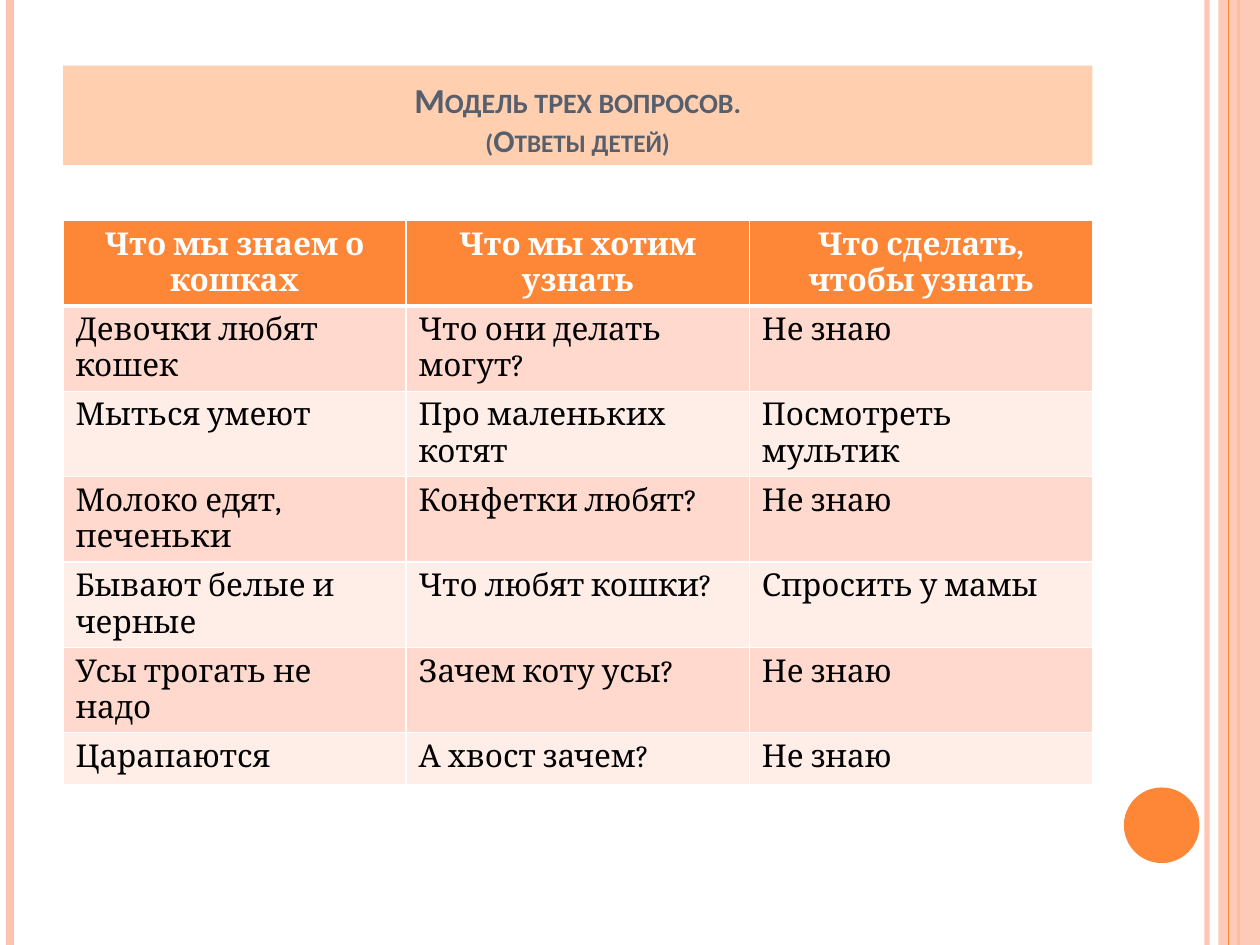
"""Builds a slide with a three-question table about cats."""
from lxml.etree import SubElement
from pptx import Presentation
from pptx.enum.shapes import MSO_CONNECTOR, MSO_SHAPE
from pptx.enum.text import MSO_ANCHOR, MSO_AUTO_SIZE, PP_ALIGN
from pptx.dml.color import RGBColor
from pptx.oxml.ns import qn
from pptx.util import Inches, Pt

ORANGE, PINK, WHITE = "FE8637", "FEC3AE", "FFFFFF"
BANDS = ["FFEDE8", "FFD9CE"]
ROWS = [
    ["Что мы знаем о кошках", "Что мы хотим узнать", "Что сделать, чтобы узнать"],
    ["Девочки любят кошек", "Что они делать могут?", "Не знаю"],
    ["Мыться умеют", "Про маленьких котят", "Посмотреть мультик"],
    ["Молоко едят, печеньки", "Конфетки любят?", "Не знаю"],
    ["Бывают белые и черные", "Что любят кошки?", "Спросить у мамы"],
    ["Усы трогать не надо", "Зачем коту усы?", "Не знаю"],
    ["Царапаются", "А хвост зачем?", "Не знаю"],
]


def paint(fill, color, opacity=100):
    fill.solid()
    fill.fore_color.rgb = RGBColor.from_string(color)
    if opacity < 100:
        tint = fill._xPr.find(qn("a:solidFill"))[0]
        SubElement(tint, qn("a:alpha"), val=str(opacity * 1000))


def add_stripe(page, left, color, weight, opacity=100):
    stripe = page.shapes.add_connector(MSO_CONNECTOR.STRAIGHT, left, 0, left, height)
    SubElement(stripe._element.spPr, qn("a:effectLst"))
    stripe.line.width = Pt(weight)
    paint(stripe.line.fill, color, opacity)


deck = Presentation()
deck.slide_width, deck.slide_height = Inches(10), Inches(7.5)
width, height = deck.slide_width, deck.slide_height
left, content_width = int(width * 0.05), Inches(8.17)
page = deck.slides.add_slide(deck.slide_layouts[5])
paint(page.background.fill, WHITE)

add_stripe(page, Inches(9.58), PINK, 3, 93)
add_stripe(page, Inches(0.08), PINK, 4.5)
add_stripe(page, Inches(9.83), ORANGE, 1.5)
band = page.shapes.add_shape(MSO_SHAPE.RECTANGLE, Inches(9.67), 0, Inches(0.33), height)
add_stripe(page, Inches(9.75), ORANGE, 0.75)
circle = page.shapes.add_shape(
    MSO_SHAPE.OVAL, Inches(8.92), Inches(6.25), Inches(0.6), Inches(0.6))
for shape, color, opacity in [(band, PINK, 87), (circle, ORANGE, 100)]:
    shape.shadow.inherit = False
    shape.line.fill.background()
    paint(shape.fill, color, opacity)

title = page.shapes.title
title.left, title.top, title.width, title.height = left, Inches(0.52), content_width, Inches(0.79)
paint(title.fill, "FFCFAF")
frame = title.text_frame
frame.auto_size = MSO_AUTO_SIZE.NONE
frame.word_wrap = True
frame.vertical_anchor = MSO_ANCHOR.BOTTOM
frame.text = "Модель трех вопросов.\v(Ответы детей)"
para = frame.paragraphs[0]
para.alignment = PP_ALIGN.CENTER
for span, size in zip(para.runs, [20, 18]):
    span.font.name, span.font.size, span.font.bold = "Calibri", Pt(size), True
    paint(span.font.fill, "575F6D")
    span._r.get_or_add_rPr().set("cap", "small")

row_height = Inches(0.41)
table = page.shapes.add_table(
    len(ROWS), len(ROWS[0]), left, Inches(1.75), content_width, row_height * len(ROWS)).table
for row, texts in enumerate(ROWS):
    table.rows[row].height = row_height
    header = row == 0
    for column, text in enumerate(texts):
        cell = table.cell(row, column)
        cell.text = text
        para = cell.text_frame.paragraphs[0]
        para.alignment = PP_ALIGN.CENTER if header else PP_ALIGN.LEFT
        font = para.runs[0].font
        font.name, font.size, font.bold = "Cambria", Pt(18), header
        paint(font.fill, WHITE if header else "000000")
        for side in ["L", "R", "T", "B"]:
            thick = (header and side == "B") or (row == 1 and side == "T")
            border = SubElement(
                cell._tc.get_or_add_tcPr(), qn(f"a:ln{side}"), w=str(Pt(3 if thick else 1)))
            SubElement(SubElement(border, qn("a:solidFill")), qn("a:srgbClr"), val=WHITE)
        paint(cell.fill, ORANGE if header else BANDS[row % 2])

deck.save("out.pptx")
